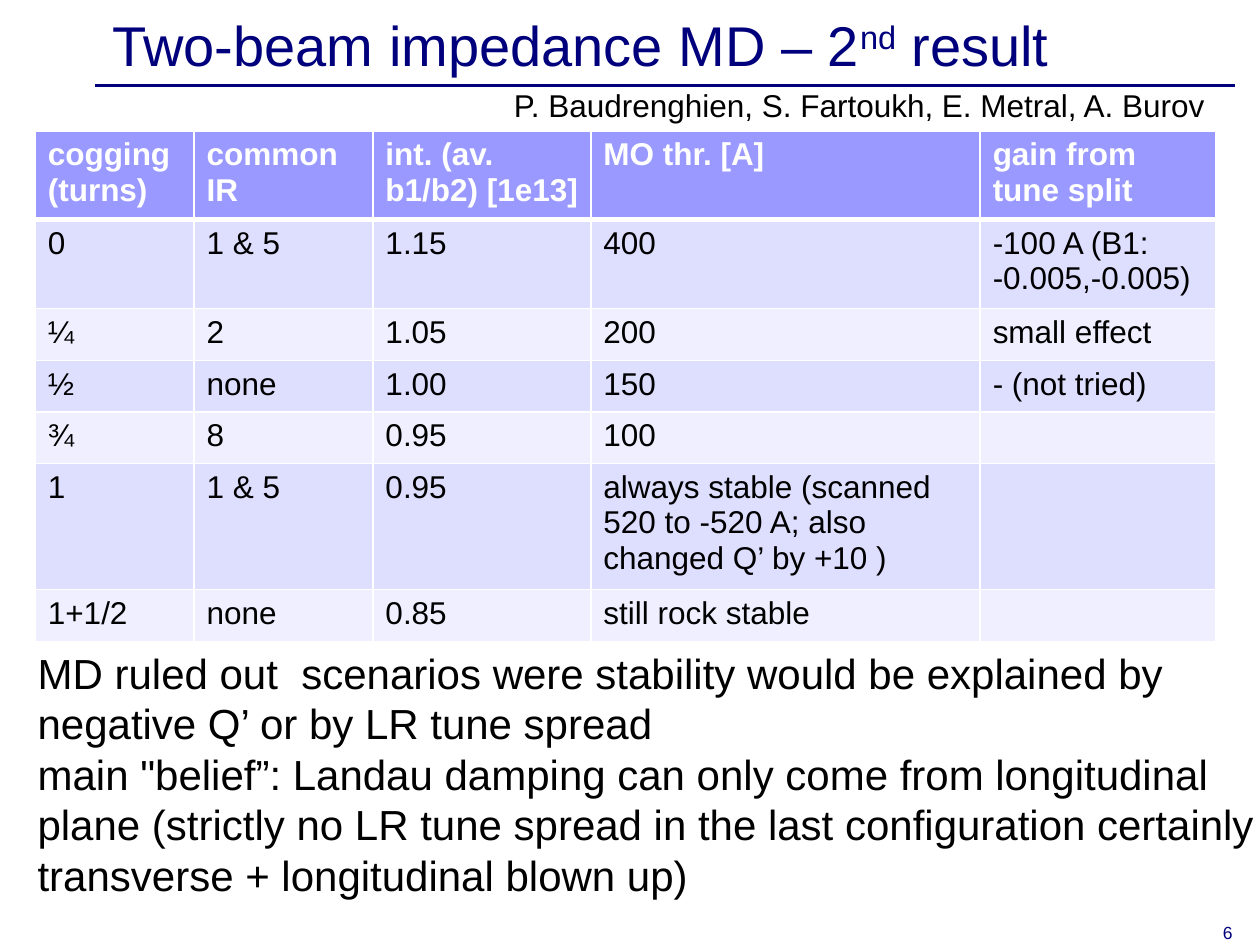
from lxml import etree
from pptx import Presentation
from pptx import util as u
from pptx.dml.color import RGBColor
from pptx.enum import shapes, text
from pptx.oxml.ns import qn

NAVY = RGBColor(0x00, 0x00, 0x7D)
BLACK = RGBColor(0, 0, 0)
WHITE = RGBColor(0xFF, 0xFF, 0xFF)
HEADER = RGBColor(0x99, 0x99, 0xFF)
BANDS = [RGBColor(0xDE, 0xDE, 0xFF), RGBColor(0xEF, 0xEF, 0xFF)]

COLUMNS = [1.26, 1.42, 1.73, 3.09, 1.87]
ROWS = [0.69, 0.71, 0.41, 0.41, 0.41, 1.0, 0.41]
RESULTS = [
    ["cogging (turns)", "common\nIR", "int. (av. b1/b2) [1e13]", "MO thr. [A]",
     "gain from tune split"],
    ["0", "1 & 5", "1.15", "400", "-100 A (B1:\n-0.005,-0.005)"],
    ["¼", "2", "1.05", "200", "small effect"],
    ["½", "none", "1.00", "150", "- (not tried)"],
    ["¾", "8", "0.95", "100", ""],
    ["1", "1 & 5", "0.95",
     "always stable (scanned 520 to -520 A; also changed Q’ by +10 )", ""],
    ["1+1/2", "none", "0.85", "still rock stable", ""],
]
CONCLUSIONS = (
    "MD ruled out  scenarios were stability would be explained by "
    "negative Q’ or by LR tune spread\n"
    "main \"belief”: Landau damping can only come from longitudinal plane "
    "(strictly no LR tune spread in the last configuration certainly "
    "transverse + longitudinal blown up)"
)


def set_font(tf, size, color, bold=False):
    for p in tf.paragraphs:
        p.font.name = "Arial"
        p.font.size = u.Pt(size)
        p.font.bold = bold
        p.font.color.rgb = color


def add_text(s, box, content, size, color, wrap=True):
    sp = s.shapes.add_textbox(*map(u.Inches, box))
    tf = sp.text_frame
    tf.word_wrap = wrap
    tf.text = content
    set_font(tf, size, color)
    return tf


def add_title(s):
    sp = s.shapes.title
    sp.left, sp.top, sp.width, sp.height = map(u.Inches, (0.67, 0, 9.5, 0.57))
    tf = sp.text_frame
    tf.auto_size = text.MSO_AUTO_SIZE.NONE
    tf.vertical_anchor = text.MSO_ANCHOR.TOP
    tf.margin_left, tf.margin_top = u.Inches(0.22), u.Inches(0.08)
    p = tf.paragraphs[0]
    p.alignment = text.PP_ALIGN.LEFT
    for part in ("Two-beam impedance MD – 2", "nd", " result"):
        r = p.add_run()
        r.text = part
        if part == "nd":
            r.font._element.set("baseline", "30000")
    set_font(tf, 32, NAVY)


def add_rule(s, x1, x2, y):
    line = s.shapes.add_connector(
        shapes.MSO_CONNECTOR.STRAIGHT, *map(u.Inches, (x1, y, x2, y)))
    line.line.color.rgb = NAVY
    line.line.width = u.Pt(2)
    etree.SubElement(line._element.spPr, qn("a:effectLst"))


def set_borders(cell, bottom):
    tc_pr = cell._tc.get_or_add_tcPr()
    for side, width in (("L", 1), ("R", 1), ("T", 1), ("B", bottom)):
        ln = etree.SubElement(tc_pr, qn("a:ln" + side), w=str(u.Pt(width)))
        fill = etree.SubElement(ln, qn("a:solidFill"))
        etree.SubElement(fill, qn("a:srgbClr"), val=str(WHITE))


def add_results(s, left, top):
    frame = s.shapes.add_table(
        len(ROWS), len(COLUMNS),
        *map(u.Inches, (left, top, sum(COLUMNS), sum(ROWS))))
    table = frame.table
    for column, width in zip(table.columns, COLUMNS):
        column.width = u.Inches(width)
    for i, (row, height) in enumerate(zip(table.rows, ROWS)):
        row.height = u.Inches(height)
        header = i == 0
        for cell, content in zip(row.cells, RESULTS[i]):
            cell.text = content
            set_font(cell.text_frame, 18, WHITE if header else BLACK, header)
            # Borders come before the fill in the cell's XML
            set_borders(cell, 3 if header else 1)
            cell.fill.solid()
            cell.fill.fore_color.rgb = HEADER if header else BANDS[(i - 1) % 2]


def main():
    prs = Presentation()
    prs.slide_width, prs.slide_height = u.Inches(10), u.Inches(7.5)
    s = prs.slides.add_slide(prs.slide_layouts[5])

    # Heading and authors
    add_rule(s, 0.75, 9.8, 0.68)
    add_title(s)
    add_text(s, (3.98, 0.63, 5.81, 0.4),
             "P. Baudrenghien, S. Fartoukh, E. Metral, A. Burov",
             18, BLACK, wrap=False)

    # Measurements and conclusions
    add_results(s, 0.28, 1.04)
    add_text(s, (0.2, 5.09, 10.08, 2.12), CONCLUSIONS, 24, BLACK)

    # Page number
    tf = add_text(s, (7.55, 7.25, 2.33, 0.28), "6", 10, NAVY)
    tf.vertical_anchor = text.MSO_ANCHOR.BOTTOM
    tf.paragraphs[0].alignment = text.PP_ALIGN.RIGHT

    prs.save("out.pptx")


if __name__ == "__main__":
    main()
